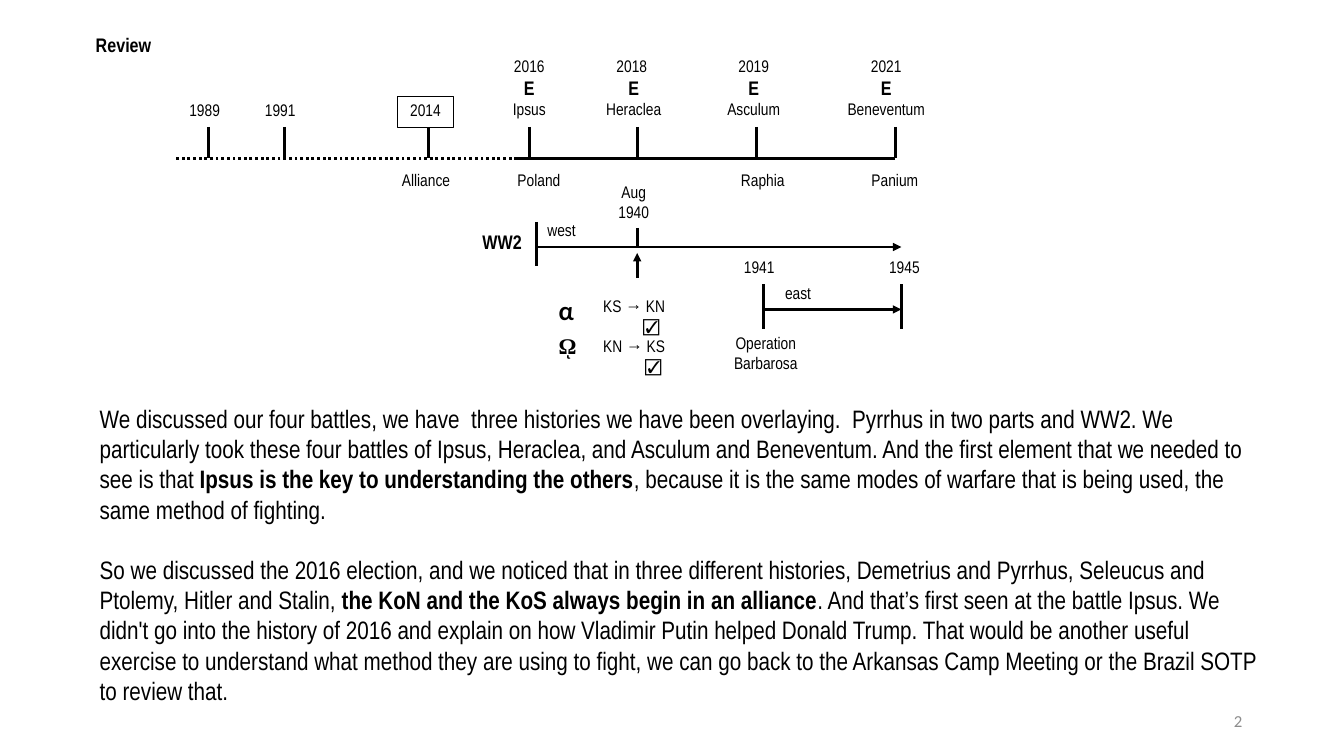
from pptx import Presentation
from pptx.dml.color import RGBColor
from pptx.enum.dml import MSO_LINE
from pptx.enum.shapes import MSO_CONNECTOR, MSO_SHAPE
from pptx.enum.text import MSO_ANCHOR, MSO_AUTO_SIZE, PP_ALIGN
from pptx.oxml.ns import qn
from pptx.util import Inches, Pt
from lxml import etree

LEFT, CENTER, RIGHT = PP_ALIGN.LEFT, PP_ALIGN.CENTER, PP_ALIGN.RIGHT
TOP, MIDDLE = MSO_ANCHOR.TOP, MSO_ANCHOR.MIDDLE
GROW, DOTTED = MSO_AUTO_SIZE.SHAPE_TO_FIT_TEXT, MSO_LINE.ROUND_DOT
STRAIGHT, RECTANGLE = MSO_CONNECTOR.STRAIGHT, MSO_SHAPE.RECTANGLE
CELL = 0.1  # inches per grid column and row


def cells(count):
    return Inches(count * CELL)


def color(hex_string):
    return RGBColor.from_string(hex_string)


def run(text, size=12, bold=False, font="Arial Narrow", ink="000000"):
    return text, size, bold, font, ink


class Diagram:
    """Draws on one slide; every length is in grid columns or rows."""
    ink = "000000"
    weight = 2
    tight = 0.4

    def __init__(self, slide):
        self.shapes = slide.shapes

    def fill_text(self, shape, paragraphs, align, inset, anchor=TOP):
        frame = shape.text_frame
        frame.word_wrap = True
        frame.vertical_anchor = anchor
        if inset is not None:
            frame.margin_left = frame.margin_right = cells(inset)
            frame.margin_top = frame.margin_bottom = cells(inset)
        for index, runs in enumerate(paragraphs):
            paragraph = frame.add_paragraph() if index else frame.paragraphs[0]
            paragraph.alignment = align
            for text, size, bold, font, ink in runs:
                piece = paragraph.add_run()
                piece.text = text
                piece.font.size = Pt(size)
                piece.font.bold = bold
                piece.font.name = font
                piece.font.color.rgb = color(ink)
        return frame

    def text(self, left, top, width, height, paragraphs,
             align=CENTER, inset=tight, anchor=TOP):
        box = self.shapes.add_textbox(*map(cells, (left, top, width, height)))
        return self.fill_text(box, paragraphs, align, inset, anchor)

    def label(self, left, top, width, height, *lines):
        return self.text(left, top, width, height, [[run(line)] for line in lines])

    def framed_label(self, left, top, width, height, caption):
        frame = self.shapes.add_shape(
            RECTANGLE, *map(cells, (left, top, width, height)))
        frame.shadow.inherit = False
        frame.fill.background()
        frame.line.color.rgb = color(self.ink)
        frame.line.width = Pt(0.25)
        self.fill_text(frame, [[run(caption)]], CENTER, self.tight)

    def line(self, x1, y1, x2, y2, arrow=False, dash=None):
        connector = self.shapes.add_connector(
            STRAIGHT, *map(cells, (x1, y1, x2, y2)))
        connector.line.color.rgb = color(self.ink)
        connector.line.width = Pt(self.weight)
        if dash:
            connector.line.dash_style = dash
        if arrow:
            outline = connector.line._get_or_add_ln()
            etree.SubElement(outline, qn("a:tailEnd"), type="triangle")
        etree.SubElement(connector._element.spPr, qn("a:effectLst"))

    def tick(self, x, top, bottom):
        self.line(x, top, x, bottom)


def main():
    deck = Presentation()
    deck.slide_width, deck.slide_height = Inches(13.33), Inches(7.5)
    diagram = Diagram(deck.slides.add_slide(deck.slide_layouts[6]))

    # Heading and page number
    diagram.text(5.8, 2.9, 12.9, 4.4, [[run("Review", 14, True)]])
    diagram.text(94.2, 69.5, 30, 4, [[run("2", 12, False, "Calibri", "8C8C8C")]],
                 RIGHT, None, MIDDLE)

    # Main timeline: dotted run-up, then the four battles
    axis, tick_top = 15.7, 12.6
    diagram.line(51.3, axis, 17.5, axis, dash=DOTTED)
    diagram.line(51.3, axis, 88.8, axis)
    for x in (20.7, 28.2, 42.5, 52.5, 63.2, 75, 88.8):
        diagram.tick(x, tick_top, axis)
    for left, year in ((17.5, "1989"), (25, "1991")):
        diagram.label(left, 9.5, 5.6, 3.1, year)
    diagram.framed_label(39.4, 9.5, 5.6, 3.1, "2014")
    battles = (
        (50, 5, "2016", "Ipsus"),
        (59.4, 6.9, "2018 ", "Heraclea"),
        (70.7, 8.1, "2019", "Asculum"),
        (83.2, 9.4, "2021", "Beneventum"),
    )
    for left, width, year, battle in battles:
        diagram.text(left, 5.1, width, 7.5,
                     [[run(year)], [run("E", 14, True)], [run(battle)]])
    below_axis = ((38.8, 6.9, "Alliance"), (50, 6.9, "Poland"),
                  (71.9, 7.5, "Raphia"), (85, 7.5, "Panium"))
    for left, width, event in below_axis:
        diagram.label(left, 16.4, width, 3.1, event)

    # WW2 western front
    diagram.text(46.7, 22.4, 6.2, 4.4, [[run("WW2", 14, True)]])
    diagram.label(53.2, 21.4, 5, 3.1, "west")
    diagram.tick(53.2, 22, 26.4)
    diagram.line(53.2, 24.5, 89.4, 24.5, arrow=True)
    diagram.label(59.4, 17.6, 6.9, 5, "Aug", "1940")
    diagram.tick(63.2, 22.6, 24.5)
    diagram.line(63.2, 27.6, 63.2, 25.1, arrow=True)

    # WW2 eastern front
    diagram.label(75.7, 27.6, 6.9, 3.1, "east")
    diagram.line(75.7, 30.7, 89.4, 30.7, arrow=True)
    for x, year_left, year in ((75.7, 72.5, "1941"), (89.4, 86.9, "1945")):
        diagram.tick(x, 28.2, 32.6)
        diagram.label(year_left, 25.1, 5.6, 3.1, year)
    diagram.label(71.9, 32.6, 8.1, 5.6, "Operation", "Barbarosa")

    # Alpha and omega: kings of south and north
    diagram.text(55, 28.9, 3.1, 3.1, [[run("α", 18, True, "Lato")]], LEFT)
    diagram.text(55, 32.6, 3.1, 5.6, [[run("ῼ", 16, True, "Times New Roman")]], LEFT)
    check = [run("☑", font="Arial")]
    kings = diagram.text(58.2, 28.9, 9.4, 9.4,
                         [[run("KS → KN")], check, [run("KN → KS")], check])
    for row, indent in ((1, 3.4), (3, 3.8)):
        properties = kings.paragraphs[row]._p.get_or_add_pPr()
        properties.set("marL", str(cells(indent)))
        properties.set("indent", "0")

    # Commentary
    commentary = [
        [
            run("We discussed our four battles, we have  three histories we have "
                "been overlaying.  Pyrrhus in two parts and WW2. We particularly "
                "took these four battles of Ipsus, Heraclea, and Asculum and "
                "Beneventum. And the first element that we needed to see is that ", 18),
            run("Ipsus is the key to understanding the others", 18, True),
            run(", because it is the same modes of warfare that is being used, "
                "the same method of fighting.", 18),
        ],
        [
            run("So we discussed the 2016 election, and we noticed that in three "
                "different histories, Demetrius and Pyrrhus, Seleucus and Ptolemy, "
                "Hitler and Stalin, ", 18),
            run("the KoN and the KoS always begin in an alliance", 18, True),
            run(". And that’s first seen at the battle Ipsus. We didn't go into the "
                "history of 2016 and explain on how Vladimir Putin helped Donald "
                "Trump. That would be another useful exercise to understand what "
                "method they are using to fight, we can go back to the Arkansas "
                "Camp Meeting or the Brazil SOTP to review that.", 18),
        ],
    ]
    body = diagram.text(8.9, 39.5, 117.5, 31.3, commentary, LEFT, None)
    body.auto_size = GROW
    body.paragraphs[1].space_before = Pt(21.5)

    deck.save("out.pptx")


if __name__ == "__main__":
    main()
